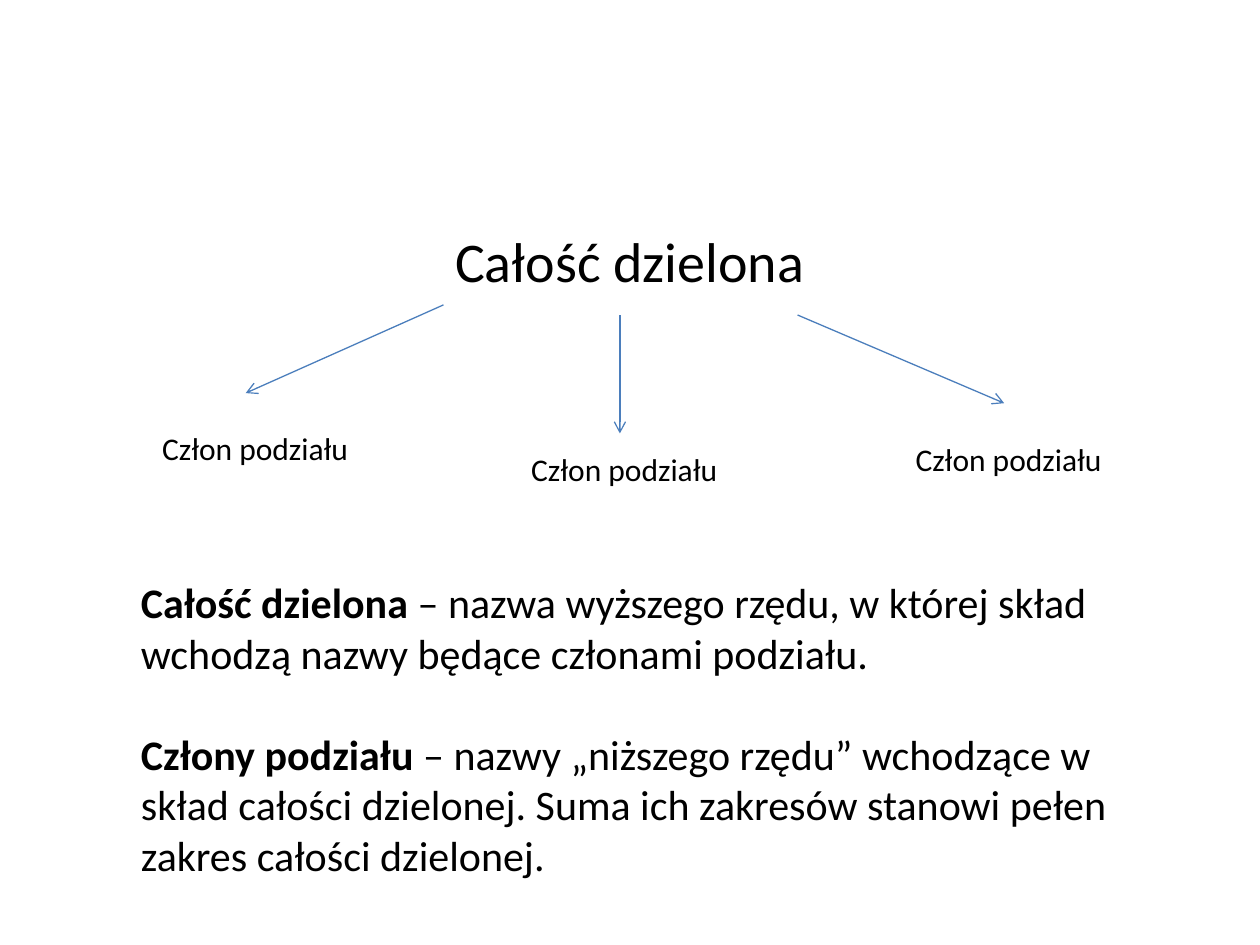
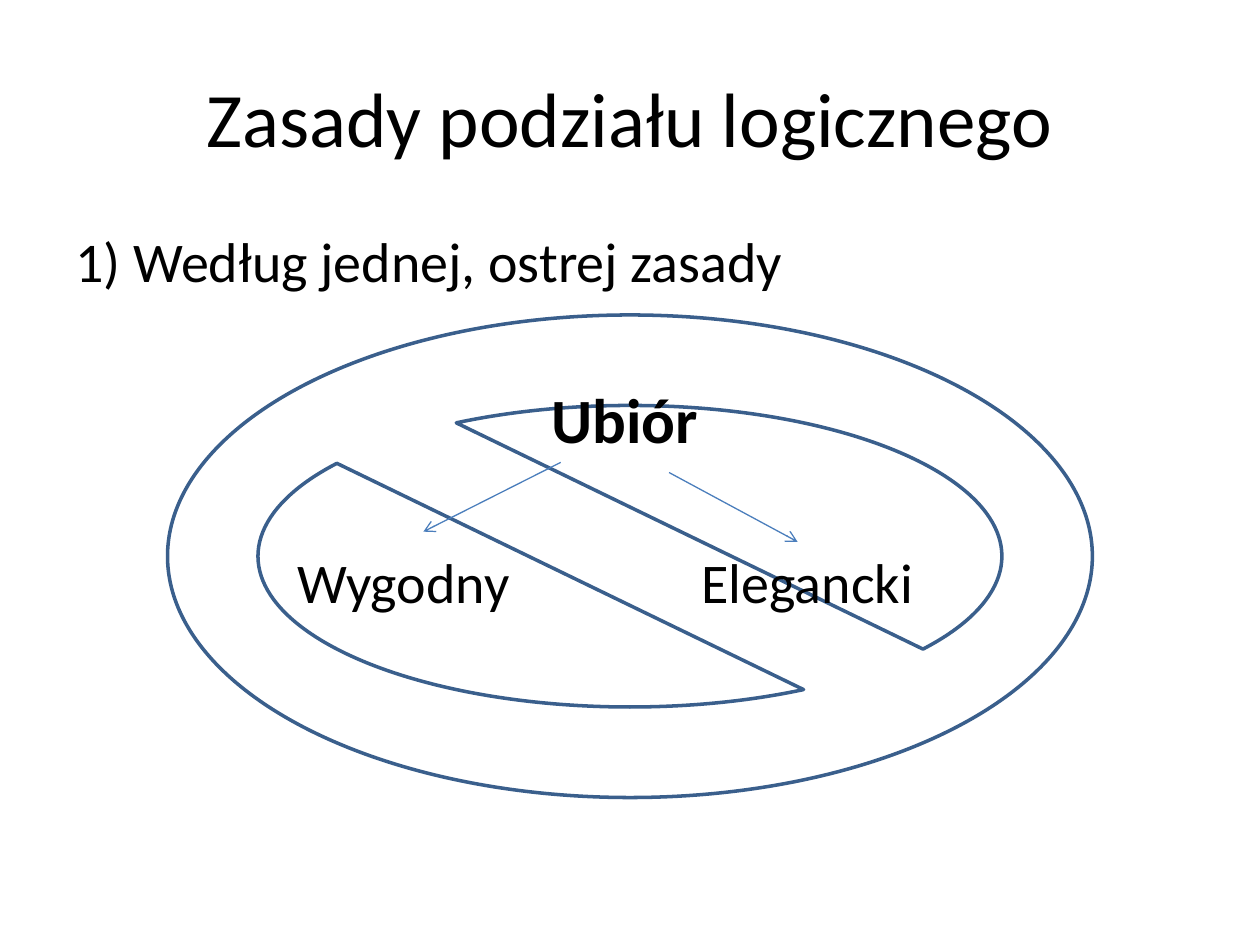
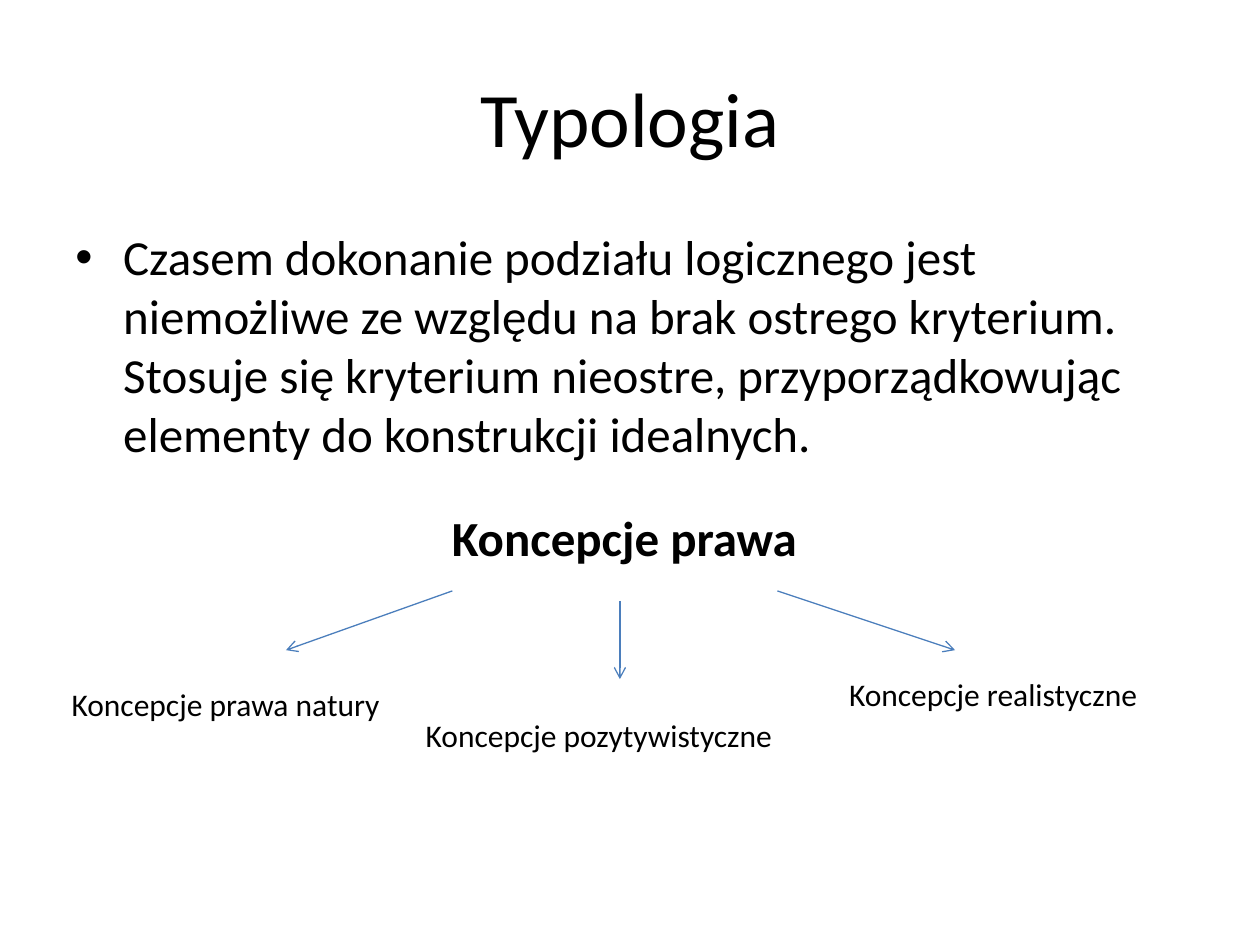
from dataclasses import dataclass
from typing import NamedTuple

from lxml import etree
from pptx import Presentation
from pptx import slide as s
from pptx import util as u
from pptx.dml import color
from pptx.enum import shapes, text as t
from pptx.oxml import ns

COLORS = {"text": "000000", "arrow": "4B7EBC", "outline": "3A5F8C"}
FONT = "Calibri"
LABEL_SIZE = 18
HANGING = u.Inches(0.38)
CENTER, LEFT = t.PP_ALIGN.CENTER, t.PP_ALIGN.LEFT


class Box(NamedTuple):
    left: float
    top: float
    width: float
    height: float


class Run(NamedTuple):
    text: str
    bold: bool = False


@dataclass(frozen=True)
class Label:
    text: str
    box: Box
    size: float = LABEL_SIZE
    bold: bool = False
    align: t.PP_ALIGN = CENTER


@dataclass(frozen=True)
class Arrow:
    start: tuple[float, float]
    end: tuple[float, float]


TITLE_BOX = Box(0.5, 0.3, 9, 1.25)
BODY_BOX = Box(0.5, 1.75, 9, 4.95)


def rgb(name: str) -> color.RGBColor:
    return color.RGBColor.from_string(COLORS[name])


def add_bullet(paragraph) -> None:
    properties = paragraph._p.get_or_add_pPr()
    properties.set("marL", str(HANGING))
    properties.set("indent", str(-HANGING))
    etree.SubElement(properties, ns.qn("a:buFont"), typeface="Arial")
    etree.SubElement(properties, ns.qn("a:buChar"), char="•")


def add_text(slide: s.Slide, content: str | list[list[Run]], box: Box, *,
             size: float, bold: bool = False, align: t.PP_ALIGN = LEFT,
             anchor: t.MSO_ANCHOR = t.MSO_ANCHOR.TOP, bullet: bool = False,
             gap: float = 0) -> None:
    frame = slide.shapes.add_textbox(*map(u.Inches, box)).text_frame
    frame.word_wrap = True
    frame.vertical_anchor = anchor
    paragraphs = [[Run(content, bold)]] if isinstance(content, str) else content
    for index, runs in enumerate(paragraphs):
        paragraph = frame.add_paragraph() if index else frame.paragraphs[0]
        paragraph.alignment = align
        if index:
            paragraph.space_before = u.Pt(gap)
        if bullet:
            add_bullet(paragraph)
        for part in runs:
            run = paragraph.add_run()
            run.text = part.text
            run.font.name = FONT
            run.font.size = u.Pt(size)
            run.font.bold = part.bold
            run.font.color.rgb = rgb("text")


def add_title(slide: s.Slide, title: str) -> None:
    add_text(slide, title, TITLE_BOX, size=44, align=CENTER,
             anchor=t.MSO_ANCHOR.MIDDLE)


def add_arrow(slide: s.Slide, arrow: Arrow) -> None:
    connector = slide.shapes.add_connector(
        shapes.MSO_CONNECTOR.STRAIGHT,
        *map(u.Inches, arrow.start + arrow.end))
    connector.line.color.rgb = rgb("arrow")
    connector.line.width = u.Pt(0.75)
    etree.SubElement(connector.line._get_or_add_ln(), ns.qn("a:tailEnd"), type="arrow")
    etree.SubElement(connector._element.spPr, ns.qn("a:effectLst"))


def add_diagram(slide: s.Slide, arrows: list[Arrow], labels: list[Label]) -> None:
    for arrow in arrows:
        add_arrow(slide, arrow)
    for label in labels:
        add_text(slide, label.text, label.box, size=label.size,
                 bold=label.bold, align=label.align)


def add_no_smoking(slide: s.Slide, box: Box) -> None:
    shape = slide.shapes.add_shape(
        shapes.MSO_SHAPE.NO_SYMBOL, *map(u.Inches, box))
    shape.shadow.inherit = False
    shape.fill.background()
    shape.line.color.rgb = rgb("outline")
    shape.line.width = u.Pt(2)


def build_division(slide: s.Slide) -> None:
    add_text(slide, "Całość dzielona", BODY_BOX, size=32, align=CENTER)
    member_boxes = [Box(0.23, 3.36, 3.59, 0.4), Box(3.59, 3.52, 2.73, 0.71),
                    Box(6.17, 3.44, 3.67, 0.71)]
    add_diagram(
        slide,
        [Arrow((3.52, 2.42), (1.95, 3.12)), Arrow((4.92, 2.5), (4.92, 3.44)),
         Arrow((6.33, 2.5), (7.97, 3.2))],
        [Label("Człon podziału", box) for box in member_boxes])
    definitions = [
        [Run("Całość dzielona ", True),
         Run("– nazwa wyższego rzędu, w której skład wchodzą nazwy będące "
             "członami podziału.")],
        [Run("Człony podziału ", True),
         Run("– nazwy „niższego rzędu” wchodzące w skład całości dzielonej. "
             "Suma ich zakresów stanowi pełen zakres całości dzielonej.")],
    ]
    add_text(slide, definitions, Box(1.02, 4.53, 8.36, 2.52), size=24, gap=29)


def build_rules(slide: s.Slide) -> None:
    add_no_smoking(slide, Box(1.33, 2.5, 7.34, 3.83))
    add_title(slide, "Zasady podziału logicznego")
    add_text(slide, "1) Według jednej, ostrej zasady", BODY_BOX, size=32)
    add_diagram(
        slide,
        [Arrow((4.45, 3.67), (3.36, 4.22)), Arrow((5.31, 3.75), (6.33, 4.3))],
        [Label("Ubiór", Box(0.39, 2.97, 9.14, 0.71), 36, bold=True),
         Label("Wygodny", Box(0.39, 4.3, 5.63, 0.64), 32),
         Label("Elegancki", Box(5.47, 4.3, 4.53, 0.64), 32, align=LEFT)])


def build_typology(slide: s.Slide) -> None:
    add_title(slide, "Typologia")
    add_text(slide,
             "Czasem dokonanie podziału logicznego jest niemożliwe ze względu "
             "na brak ostrego kryterium. Stosuje się kryterium nieostre, "
             "przyporządkowując elementy do konstrukcji idealnych.",
             BODY_BOX, size=28, bullet=True)
    add_diagram(
        slide,
        [Arrow((3.59, 4.69), (2.27, 5.16)), Arrow((4.92, 4.77), (4.92, 5.39)),
         Arrow((6.17, 4.69), (7.58, 5.16))],
        [Label("Koncepcje prawa", Box(0.23, 3.98, 9.45, 0.57), 28, bold=True),
         Label("Koncepcje prawa natury", Box(0.47, 5.39, 3.2, 0.4), align=LEFT),
         Label("Koncepcje pozytywistyczne", Box(3.28, 5.63, 3.28, 0.4), align=LEFT),
         Label("Koncepcje realistyczne", Box(6.64, 5.31, 2.97, 0.4), align=LEFT)])


def main() -> None:
    presentation = Presentation()
    presentation.slide_width = u.Inches(10)
    presentation.slide_height = u.Inches(7.5)
    blank = presentation.slide_layouts[6]
    for build in (build_division, build_rules, build_typology):
        build(presentation.slides.add_slide(blank))
    presentation.save("out.pptx")


if __name__ == "__main__":
    main()
